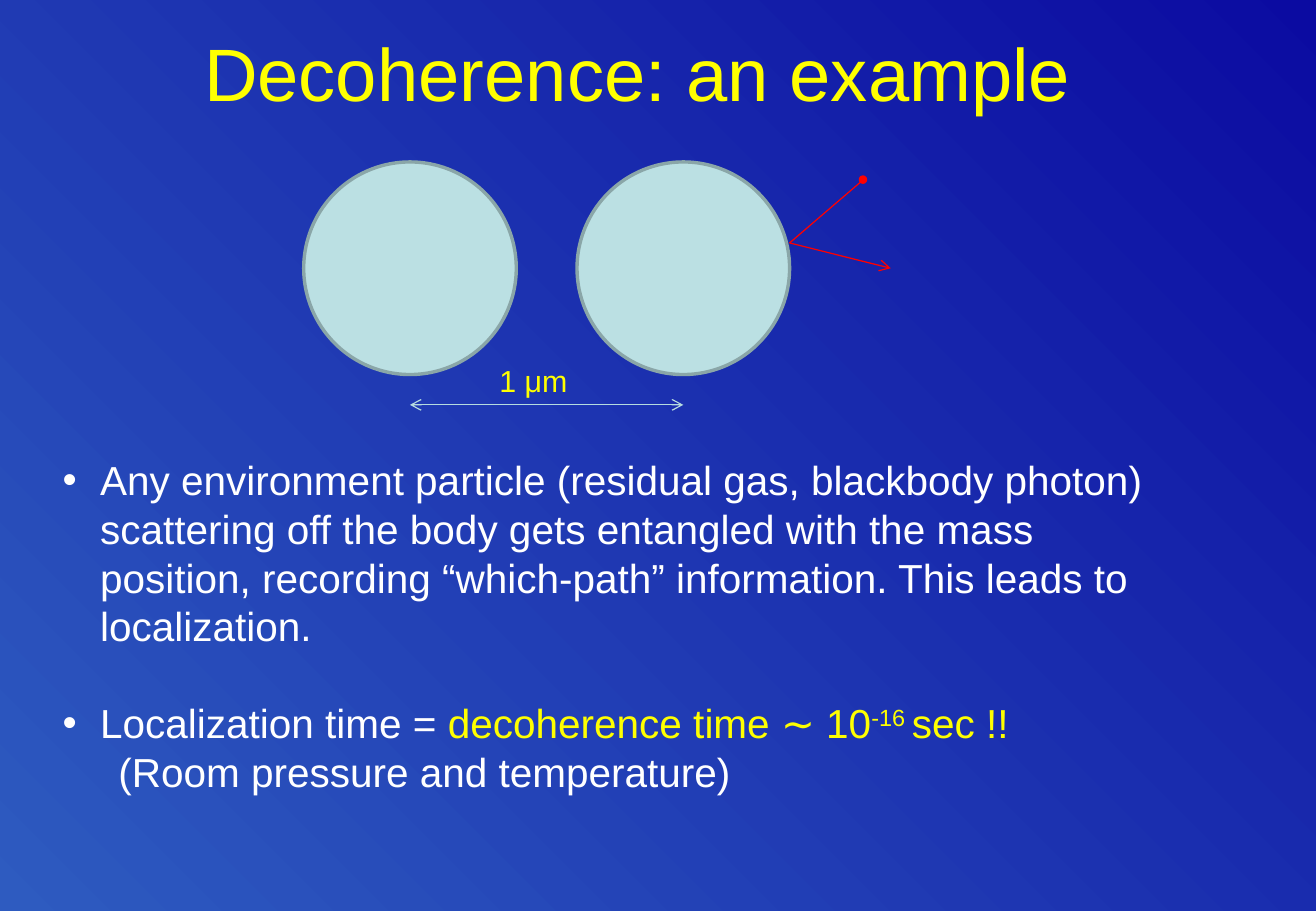
from lxml.etree import SubElement
from pptx import Presentation
from pptx.dml.color import RGBColor as RGB
from pptx.enum.shapes import MSO_CONNECTOR as LINE, MSO_SHAPE as SHAPE
from pptx.enum.text import MSO_ANCHOR as ANCHOR, PP_ALIGN as ALIGN
from pptx.oxml.ns import qn
from pptx.util import Inches, Pt

WHITE = RGB(0xFF, 0xFF, 0xFF)
YELLOW = RGB(0xFF, 0xFF, 0x00)
RED = RGB(0xFF, 0x00, 0x00)
PALE = RGB(0xBB, 0xE0, 0xE3)
RIM = RGB(0x8A, 0xA6, 0xA8)
SPAN = RGB(0xB6, 0xDC, 0xDF)
DEEP = RGB(0x0B, 0x0B, 0xA1)
LIGHT = RGB(0x2E, 0x5B, 0xC0)
COLS, ROWS = 130, 90
BALL, TOP = 21, 16
LEFTS = 30, 57


def grid(*cells):
    """Turn grid cells, twelve to the inch, into lengths."""
    return [Inches(cell / 12) for cell in cells]


def paint(slide):
    """Fill the background from lower left to upper right."""
    fill = slide.background.fill
    fill.gradient()
    fill.gradient_angle = 45
    for stop, color in zip(fill.gradient_stops, (LIGHT, DEEP)):
        stop.color.rgb = color


def add_disc(slide, left, top, size, color, rim):
    """Draw a filled circle."""
    disc = slide.shapes.add_shape(SHAPE.OVAL, *grid(left, top, size, size))
    disc.shadow.inherit = False
    disc.fill.solid()
    disc.fill.fore_color.rgb = color
    disc.line.color.rgb = rim
    disc.line.width = Pt(2)


def add_line(slide, start, end, color, *tips):
    """Draw a thin line with open arrowheads at the named tips."""
    line = slide.shapes.add_connector(LINE.STRAIGHT, *grid(*start, *end))
    line.line.color.rgb = color
    line.line.width = Pt(0.75)
    for tip in tips:
        SubElement(line.line._get_or_add_ln(), qn(f"a:{tip}"), type="arrow")
    SubElement(line._element.spPr, qn("a:effectLst"))


def add_box(slide, cells, wrap=True):
    """Add an empty text box and return its frame."""
    frame = slide.shapes.add_textbox(*grid(*cells)).text_frame
    frame.word_wrap = wrap
    return frame


def set_font(par, size, color):
    """Set the font of a whole paragraph."""
    par.font.name = "Arial"
    par.font.size = Pt(size)
    par.font.color.rgb = color


def add_label(slide, cells, text, size, wrap=True):
    """Add one centred yellow line."""
    frame = add_box(slide, cells, wrap)
    frame.vertical_anchor = ANCHOR.MIDDLE
    par = frame.paragraphs[0]
    par.text = text
    par.alignment = ALIGN.CENTER
    set_font(par, size, YELLOW)


def set_par(par, runs, bullet=True):
    """Write runs of text, colour and raise into a body paragraph."""
    props = par._p.get_or_add_pPr()
    props.set("marL", str(Inches(0.31 if bullet else 0.46)))
    props.set("indent", str(Inches(-0.31 if bullet else 0)))
    par.line_spacing = Pt(28.8)
    if bullet:
        SubElement(props, qn("a:buFont"), typeface="Arial")
        SubElement(props, qn("a:buChar"), char="•")
    set_font(par, 24, WHITE)
    for text, color, lift in runs:
        run = par.add_run()
        run.text = text
        if color != WHITE:
            run.font.color.rgb = color
        if lift:
            run.font._element.set("baseline", str(lift * 1000))


def add_body(slide):
    """Add the bulleted text."""
    frame = add_box(slide, (5, 44.4, 110, 35.2))
    set_par(frame.paragraphs[0], [(
        "Any environment particle (residual gas, blackbody photon) "
        "scattering off the body gets entangled with the mass position, "
        "recording “which-path” information. This leads to localization.",
        WHITE, 0)])
    time = frame.add_paragraph()
    set_par(time, [("Localization time = ", WHITE, 0),
                   ("decoherence time ∼ 10", YELLOW, 0),
                   ("-16 ", YELLOW, 30), ("sec !!", YELLOW, 0)])
    time.space_before = Pt(28.8)
    set_par(frame.add_paragraph(),
            [("(Room pressure and temperature)", WHITE, 0)], False)


def main():
    """Build and save the slide."""
    deck = Presentation()
    deck.slide_width, deck.slide_height = grid(COLS, ROWS)
    slide = deck.slides.add_slide(deck.slide_layouts[6])
    paint(slide)
    add_label(slide, (12, 0.25, 102, 13.75), "Decoherence: an example", 44)
    for left in LEFTS:
        add_disc(slide, left, TOP, BALL, PALE, RIM)
    start, end = [(left + BALL / 2, 40) for left in LEFTS]
    add_line(slide, start, end, SPAN, "headEnd", "tailEnd")
    add_label(slide, (48.1, 35.2, 9.2, 4.8), "1 μm", 18, False)
    add_body(slide)
    hit = LEFTS[1] + BALL, 24
    add_disc(slide, 85, 17.5, 0.5, RED, RED)
    add_line(slide, (85, 18), hit, RED)
    add_line(slide, hit, (88, 26.5), RED, "tailEnd")
    deck.save("out.pptx")


if __name__ == "__main__":
    main()
